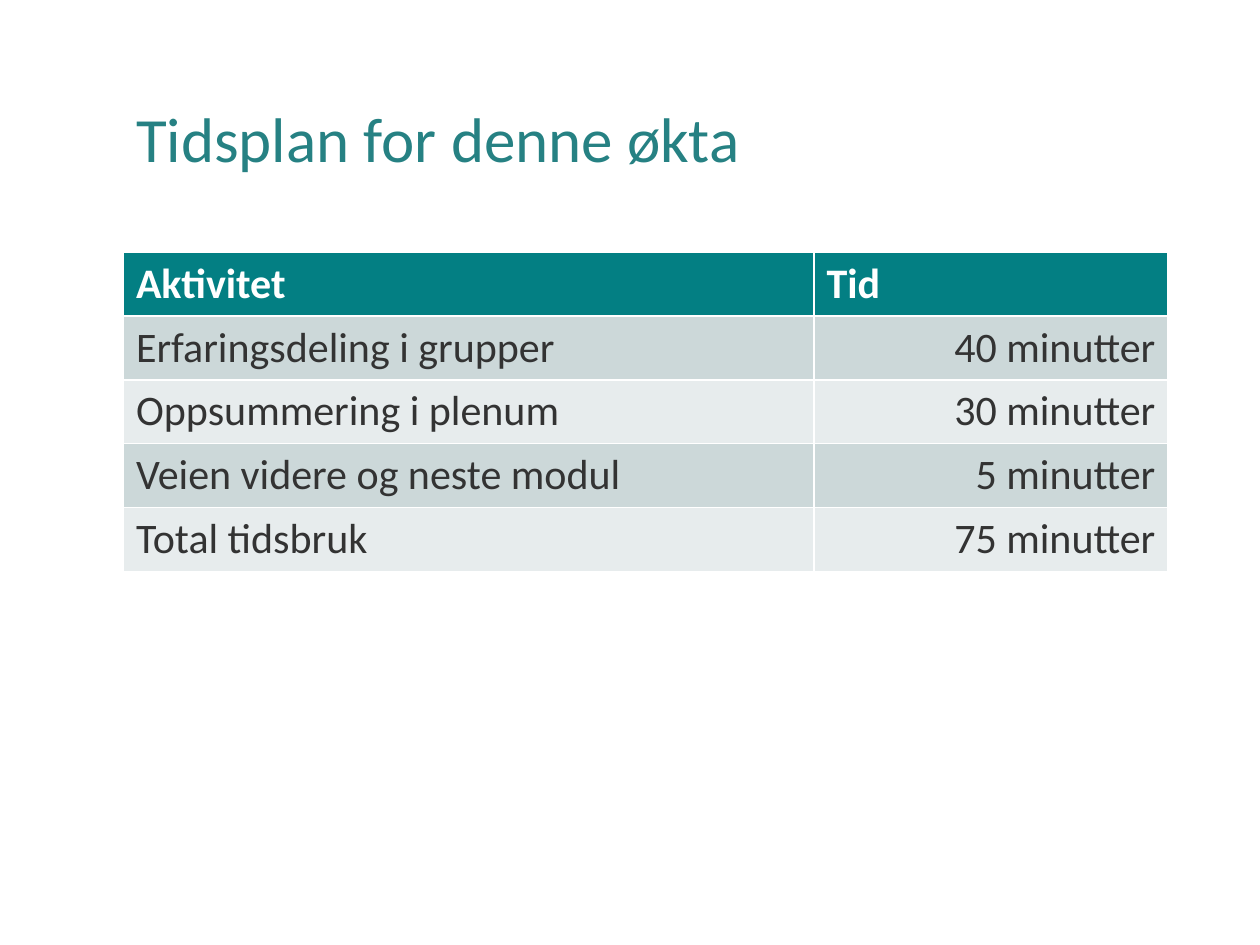
from pptx import Presentation
from pptx.dml.color import RGBColor
from pptx.enum import text
from pptx.util import Inches, Pt

FONT = "Calibri"
COLORS = {
    "title": "268183",
    "header": "037F83",
    "header_text": "FFFFFF",
    "body_text": "333333",
    "odd_row": "CCD8D9",
    "even_row": "E7ECED",
}
SCHEDULE = [
    ("Aktivitet", "Tid"),
    ("Erfaringsdeling i grupper", "40 minutter"),
    ("Oppsummering i plenum", "30 minutter"),
    ("Veien videre og neste modul", "5 minutter"),
    ("Total tidsbruk", "75 minutter"),
]


def write(frame, words, size, color, bold=False, align=text.PP_ALIGN.LEFT, spacing=None):
    para = frame.paragraphs[0]
    para.alignment = align
    para.line_spacing = spacing
    span = para.add_run()
    span.text = words
    span.font.name = FONT
    span.font.size = Pt(size)
    span.font.bold = bold
    span.font.color.rgb = RGBColor.from_string(COLORS[color])


def place_title(page, left, top, width, height):
    title = page.shapes.title
    title.left, title.top, title.width, title.height = left, top, width, height
    title.text_frame.vertical_anchor = text.MSO_ANCHOR.MIDDLE
    write(title.text_frame, "Tidsplan for denne økta", 36, "title", spacing=0.9)


def place_schedule(page, left, top, width, height):
    """The default table style supplies the white rules between cells."""
    table = page.shapes.add_table(len(SCHEDULE), 2, left, top, width, height).table
    table.columns[0].width = Inches(5.48)
    table.columns[1].width = width - Inches(5.48)
    for row, entries in enumerate(SCHEDULE):
        is_header = row == 0
        fill = "header" if is_header else "odd_row" if row % 2 else "even_row"
        for column, words in enumerate(entries):
            cell = table.cell(row, column)
            cell.fill.solid()
            cell.fill.fore_color.rgb = RGBColor.from_string(COLORS[fill])
            is_time = column == 1 and not is_header
            write(
                cell.text_frame, words, 24,
                "header_text" if is_header else "body_text",
                bold=is_header,
                align=text.PP_ALIGN.RIGHT if is_time else text.PP_ALIGN.LEFT,
            )


def main():
    deck = Presentation()
    deck.slide_width, deck.slide_height = Inches(10), Inches(7.5)
    page = deck.slides.add_slide(deck.slide_layouts[5])
    left, width = Inches(0.98), Inches(8.29)
    place_title(page, left, Inches(0.4), width, Inches(1.45))
    place_schedule(page, left, Inches(2), width, Inches(2.5))
    deck.save("out.pptx")


if __name__ == "__main__":
    main()
